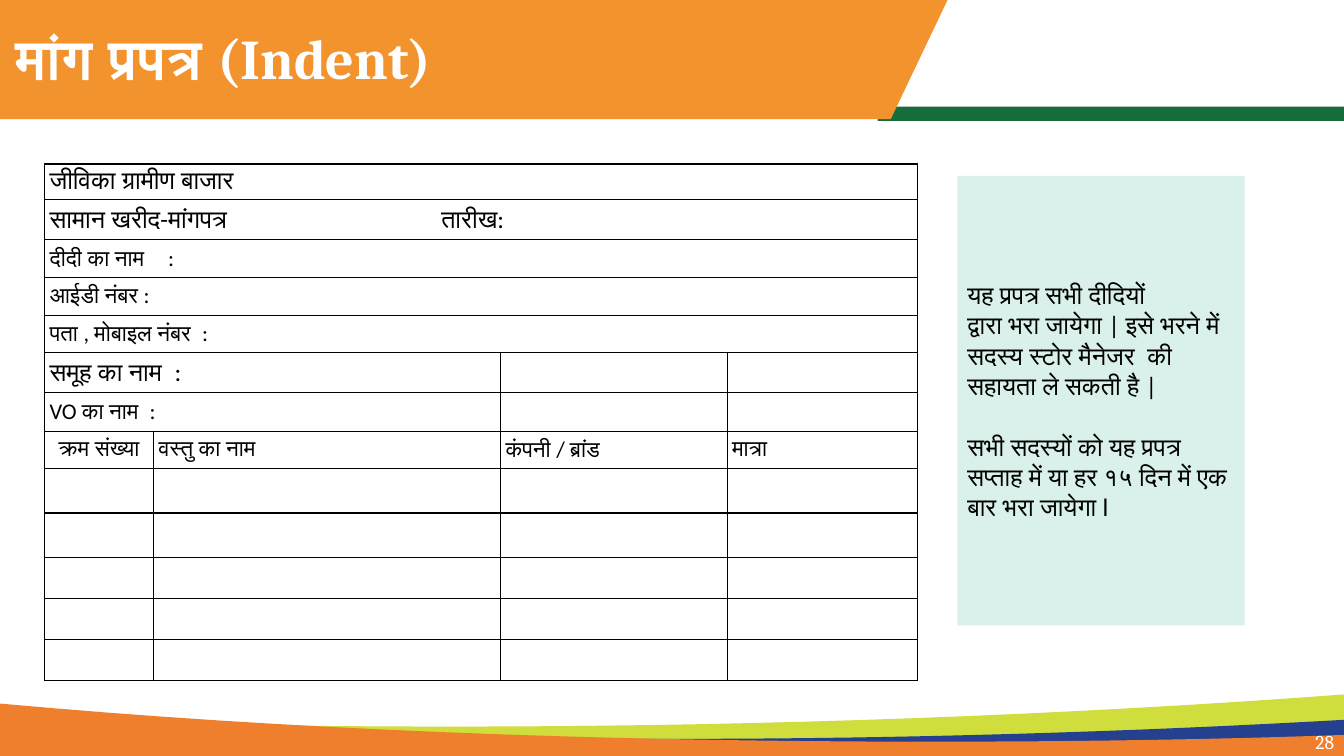
from collections import namedtuple
from dataclasses import dataclass

import pptx
import pptx.dml.color
import pptx.enum.shapes
import pptx.enum.text
import pptx.oxml
import pptx.util

Cm, Pt = pptx.util.Cm, pptx.util.Pt
RGB = pptx.dml.color.RGBColor.from_string
ALIGN = pptx.enum.text.PP_ALIGN
MIDDLE = pptx.enum.text.MSO_ANCHOR.MIDDLE
RECT = pptx.enum.shapes.MSO_SHAPE.RECTANGLE
NS = 'xmlns:a="http://schemas.openxmlformats.org/drawingml/2006/main"'
Box = namedtuple("Box", "x y w h")


@dataclass(frozen=True)
class Theme:
    white: str = "FFFFFF"
    ink: str = "000000"
    banner: str = "F3932D"
    bar: str = "156D3C"
    lime: str = "CFDD3D"
    blue: str = "25408F"
    orange: str = "EF7F2D"
    panel: str = "D9F1EA"
    serif: str = "Cambria"
    sans: str = "Calibri"
    title: int = 40
    body: int = 18
    small: int = 16
    number: int = 14
    thin: float = 0.75
    thick: float = 1.5


T = Theme()


def paint(shape, color):
    shape.shadow.inherit = False
    shape.fill.solid()
    shape.fill.fore_color.rgb = RGB(color)
    shape.line.fill.background()


def write(para, text, size, font=T.sans, color=T.ink, bold=False):
    run = para.add_run()
    run.text = text
    run.font.name, run.font.size, run.font.bold = font, Pt(size), bold
    run.font.color.rgb = RGB(color)


def rect(slide, box, color):
    shape = slide.shapes.add_shape(RECT, *map(Cm, box))
    paint(shape, color)
    return shape


def outline(slide, box, points, color):
    """Draw a filled polygon whose points are offsets in cm from the box corner."""
    spots = [(Cm(box.x + x), Cm(box.y + y)) for x, y in points]
    pen = slide.shapes.build_freeform(*spots[0])
    pen.add_line_segments(spots[1:], close=True)
    paint(pen.convert_to_shape(), color)


def label(slide, box, text, size, align, bold=False):
    frame = slide.shapes.add_textbox(*map(Cm, box)).text_frame
    frame.word_wrap = True
    frame.vertical_anchor = MIDDLE
    para = frame.paragraphs[0]
    para.alignment = align
    write(para, text, size, T.serif, T.white, bold)


def header(slide, box, text):
    rect(slide, Box(box.x + 22.12, box.y + 2.69, box.w - 22.12, 0.36), T.bar)
    outline(slide, box, [(0, 0), (23.88, 0), (22.45, 3), (0, 3)], T.banner)
    label(slide, Box(box.x + 0.13, box.y + 0.46, 22, 1.96), text, T.title, ALIGN.LEFT, True)


def curve(knots, steps=16):
    """Sample a cubic Bezier curve given by four points."""
    for i in range(steps + 1):
        t = i / steps
        parts = ((1 - t) ** 3, 3 * t * (1 - t) ** 2, 3 * t * t * (1 - t), t ** 3)
        yield tuple(sum(p * k[axis] for p, k in zip(parts, knots)) for axis in (0, 1))


def footer(slide, box, number):
    waves = [
        (T.lime, [(box.w, 0), (27.03, 0.51), (19.43, 0.81), (11.43, 0.81),
                  (7.52, 0.81), (3.68, 0.74), (0, 0.61)]),
        (T.blue, [(box.w, 0.64), (28.55, 0.94), (22.86, 1.12), (16.94, 1.12),
                  (11.05, 1.12), (5.33, 0.94), (0, 0.64)]),
        (T.orange, [(box.w, 1.02), (30.51, 1.14), (27.03, 1.19), (23.44, 1.19),
                    (15.06, 1.19), (7.11, 0.88), (0, 0.23)]),
    ]
    for color, knots in waves:
        crest = [*curve(knots[:4]), *curve(knots[3:])]
        outline(slide, box, crest + [(0, box.h), (box.w, box.h)], color)
    label(slide, Box(box.x + box.w - 1.15, box.y + 0.74, 1.15, 0.91), number,
          T.number, ALIGN.RIGHT)


def border(cell, top, bottom):
    props = cell._tc.get_or_add_tcPr()
    widths = {"L": T.thin, "R": T.thin, "T": top, "B": bottom}
    for i, (side, width) in enumerate(widths.items()):
        props.insert(i, pptx.oxml.parse_xml(
            f'<a:ln{side} {NS} w="{Pt(width)}"><a:solidFill>'
            f'<a:srgbClr val="{T.ink}"/></a:solidFill></a:ln{side}>'))


def tab(para, place):
    para._p.get_or_add_pPr().append(pptx.oxml.parse_xml(
        f'<a:tabLst {NS}><a:tab pos="{Cm(place)}" algn="l"/></a:tabLst>'))


def form(slide, box):
    cols = [2.75, 8.74, 5.71, 4.8]
    # height, merged columns, type size, texts, tab stop
    rows = [
        (0.89, 4, T.body, ["जीविका ग्रामीण बाजार"], None),
        (1.02, 4, T.body, ["सामान खरीद-मांगपत्र\tतारीख:"], 9.87),
        (0.94, 4, T.small, ["दीदी का नाम\t:"], 2.99),
        (0.96, 4, T.small, ["आईडी नंबर :"], None),
        (0.94, 4, T.small, ["पता , मोबाइल नंबर  :"], None),
        (1.02, 2, T.body, ["समूह का नाम  :"], None),
        (0.97, 2, T.small, ["VO का नाम  :"], None),
        (0.93, 1, T.small, ["क्रम संख्या", "वस्तु का नाम", "कंपनी / ब्रांड", "मात्रा"], None),
    ] + [(high, 1, T.body, [], None) for high in (1.13, 1.13, 1.03, 1.03, 1.03)]
    heavy = {0, 9, len(rows)}
    rule = [T.thick if i in heavy else T.thin for i in range(len(rows) + 1)]

    grid = slide.shapes.add_table(len(rows), len(cols), *map(Cm, box)).table
    grid.first_row = grid.horz_banding = False
    for col, wide in zip(grid.columns, cols):
        col.width = Cm(wide)
    for r, (high, span, size, texts, stop) in enumerate(rows):
        grid.rows[r].height = Cm(high)
        for c in range(len(cols)):
            cell = grid.cell(r, c)
            cell.vertical_anchor = MIDDLE
            cell.margin_left = cell.margin_right = Cm(0.13)
            cell.margin_top = cell.margin_bottom = Cm(0.02)
            cell.fill.background()
            border(cell, rule[r], rule[r + 1])
        if span > 1:
            grid.cell(r, 0).merge(grid.cell(r, span - 1))
        for c, text in enumerate(texts):
            para = grid.cell(r, c).text_frame.paragraphs[0]
            if stop:
                tab(para, stop)
            if len(texts) > 1 and c == 0:
                para.alignment = ALIGN.CENTER
            write(para, text, size)


def panel(slide, box):
    frame = rect(slide, box, T.panel).text_frame
    frame.word_wrap = True
    frame.vertical_anchor = MIDDLE
    notes = [
        ("यह प्रपत्र सभी दीदियों", 0),
        ("द्वारा भरा जायेगा | इसे भरने में सदस्य स्टोर मैनेजर  की सहायता ले सकती है |", 0),
        ("सभी सदस्यों को यह प्रपत्र सप्ताह में या हर १५ दिन में एक बार भरा जायेगा l", 22),
    ]
    for i, (text, gap) in enumerate(notes):
        para = frame.add_paragraph() if i else frame.paragraphs[0]
        para.alignment = ALIGN.LEFT
        if gap:
            para.space_before = Pt(gap)
        write(para, text, T.body)


def main():
    deck = pptx.Presentation()
    deck.slide_width, deck.slide_height = Cm(33.87), Cm(19.05)
    slide = deck.slides.add_slide(deck.slide_layouts[6])
    header(slide, Box(0, 0, 33.87, 3.05), "मांग प्रपत्र (Indent)")
    footer(slide, Box(0, 17.5, 33.87, 1.55), "28")
    form(slide, Box(1.12, 4.13, 22, 13.02))
    panel(slide, Box(24.13, 4.43, 7.24, 11.33))
    deck.save("out.pptx")


if __name__ == "__main__":
    main()
